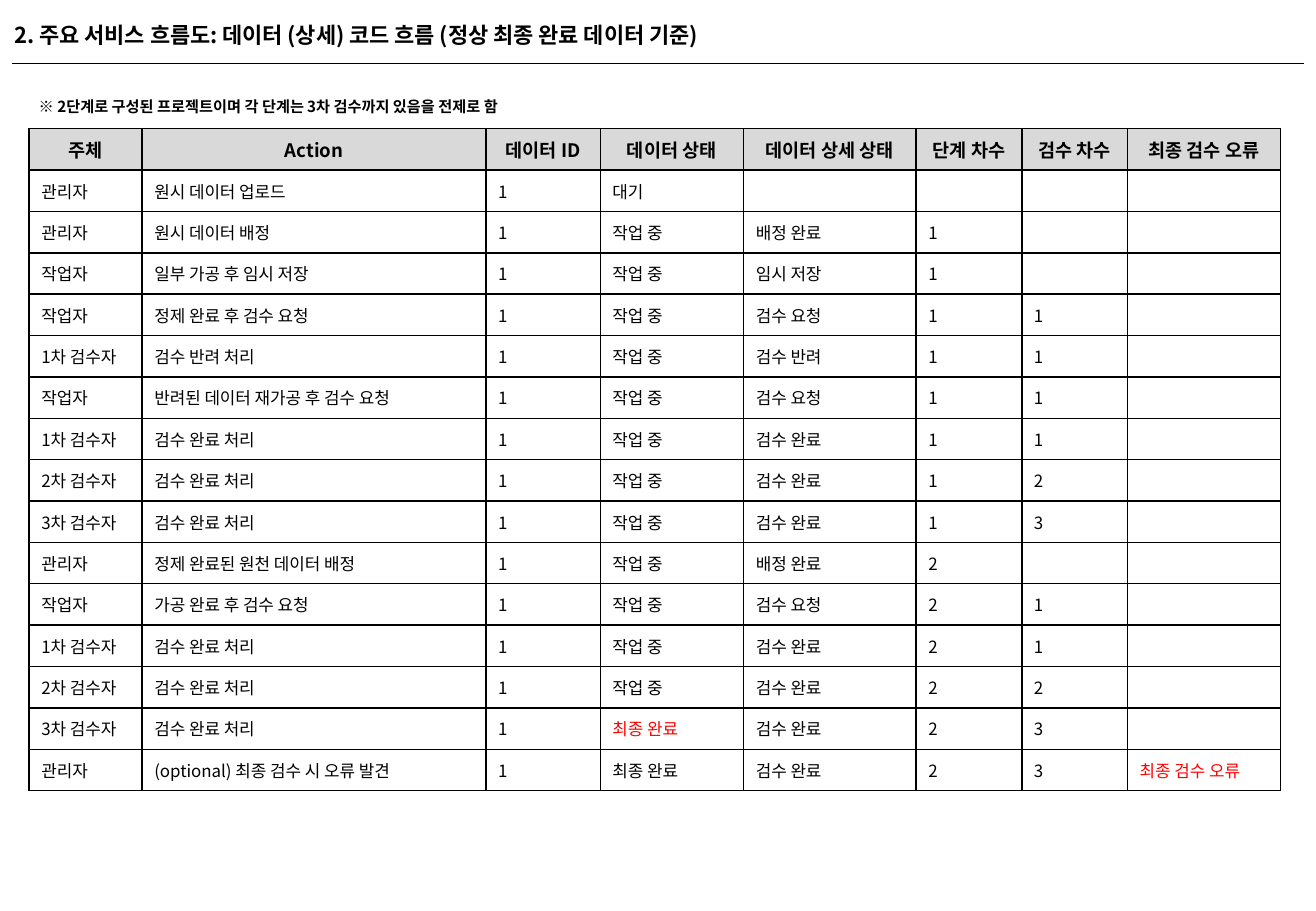
from lxml.etree import SubElement as Sub
from pptx import Presentation
from pptx.dml.color import RGBColor
from pptx.enum.shapes import MSO_CONNECTOR as Conn
from pptx.enum.text import MSO_ANCHOR as Anchor, MSO_AUTO_SIZE as Auto, PP_ALIGN as Align
from pptx.oxml.ns import qn
from pptx.util import Inches, Pt

FONT = "Noto Sans CJK KR"
BLACK = RGBColor(0x00, 0x00, 0x00)
RED = RGBColor(0xFF, 0x00, 0x00)
GRAY = RGBColor(0xD9, 0xD9, 0xD9)


def write(frame, text, size=10, bold=False, color=BLACK, align=Align.LEFT, space=None):
    par = frame.paragraphs[0]
    par.alignment = align
    if space:
        par.line_spacing = space
    if not text:
        # The end mark sets the height of an empty cell
        Sub(par._p, qn("a:endParaRPr"), sz=str(size * 100))
        return
    run = par.add_run()
    run.text = text
    font = run.font
    font.name, font.size, font.bold = FONT, Pt(size), bold
    font.color.rgb = color
    Sub(font._element, qn("a:ea"), typeface=FONT)


def border(cell):
    props = cell._tc.get_or_add_tcPr()
    for side in ("lnL", "lnR", "lnT", "lnB"):
        line = Sub(props, qn("a:" + side), w=str(Pt(1)))
        fill = Sub(line, qn("a:solidFill"))
        Sub(fill, qn("a:srgbClr"), val=str(BLACK))


prs = Presentation()
prs.slide_width, prs.slide_height = Inches(10.83), Inches(7.5)
slide = prs.slides.add_slide(prs.slide_layouts[6])
shapes = slide.shapes

# Title
title = shapes.add_textbox(Inches(0.02), Inches(0.13), Inches(10.52), Inches(0.32)).text_frame
title.word_wrap = True
title.auto_size = Auto.SHAPE_TO_FIT_TEXT
write(title, "2. 주요 서비스 흐름도: 데이터 (상세) 코드 흐름 (정상 최종 완료 데이터 기준)",
      size=13, bold=True)

# Rule under the title
rule = shapes.add_connector(Conn.STRAIGHT, Inches(0.1), Inches(0.52), Inches(10.73), Inches(0.52))
rule.line.color.rgb = BLACK
rule.line.width = Pt(0.75)
Sub(rule._element.spPr, qn("a:effectLst"))

# Table of service steps
HEADS = ["주체", "Action", "데이터 ID", "데이터 상태", "데이터 상세 상태",
         "단계 차수", "검수 차수", "최종 검수 오류"]
WIDTHS = [0.93, 2.83, 0.94, 1.18, 1.42, 0.87, 0.87, 1.26]
STEPS = [
    ["관리자", "원시 데이터 업로드", "1", "대기", "", "", "", ""],
    ["관리자", "원시 데이터 배정", "1", "작업 중", "배정 완료", "1", "", ""],
    ["작업자", "일부 가공 후 임시 저장", "1", "작업 중", "임시 저장", "1", "", ""],
    ["작업자", "정제 완료 후 검수 요청", "1", "작업 중", "검수 요청", "1", "1", ""],
    ["1차 검수자", "검수 반려 처리", "1", "작업 중", "검수 반려", "1", "1", ""],
    ["작업자", "반려된 데이터 재가공 후 검수 요청", "1", "작업 중", "검수 요청", "1", "1", ""],
    ["1차 검수자", "검수 완료 처리", "1", "작업 중", "검수 완료", "1", "1", ""],
    ["2차 검수자", "검수 완료 처리", "1", "작업 중", "검수 완료", "1", "2", ""],
    ["3차 검수자", "검수 완료 처리", "1", "작업 중", "검수 완료", "1", "3", ""],
    ["관리자", "정제 완료된 원천 데이터 배정", "1", "작업 중", "배정 완료", "2", "", ""],
    ["작업자", "가공 완료 후 검수 요청", "1", "작업 중", "검수 요청", "2", "1", ""],
    ["1차 검수자", "검수 완료 처리", "1", "작업 중", "검수 완료", "2", "1", ""],
    ["2차 검수자", "검수 완료 처리", "1", "작업 중", "검수 완료", "2", "2", ""],
    ["3차 검수자", "검수 완료 처리", "1", "최종 완료", "검수 완료", "2", "3", ""],
    ["관리자", "(optional) 최종 검수 시 오류 발견", "1", "최종 완료", "검수 완료", "2", "3",
     "최종 검수 오류"],
]
ALERTS = {(14, 3), (15, 7)}

rows = [HEADS] + STEPS
table = shapes.add_table(len(rows), len(HEADS), Inches(0.24), Inches(1.06),
                         Inches(10.3), Inches(5.45)).table
table.first_row = table.horz_banding = False
for col, width in zip(table.columns, WIDTHS):
    col.width = Inches(width)

for r, row in enumerate(rows):
    for c, text in enumerate(row):
        cell = table.cell(r, c)
        cell.vertical_anchor = Anchor.MIDDLE
        border(cell)
        if r == 0:
            cell.fill.solid()
            cell.fill.fore_color.rgb = GRAY
            write(cell.text_frame, text, size=11, bold=True, align=Align.CENTER)
        else:
            cell.fill.background()
            write(cell.text_frame, text, color=RED if (r, c) in ALERTS else BLACK)

# Note above the table
note = shapes.add_textbox(Inches(0.22), Inches(0.68), Inches(4.42), Inches(0.3)).text_frame
note.word_wrap = False
note.auto_size = Auto.SHAPE_TO_FIT_TEXT
write(note, "※ 2단계로 구성된 프로젝트이며 각 단계는 3차 검수까지 있음을 전제로 함",
      size=9, bold=True, space=1.5)

prs.save("out.pptx")
